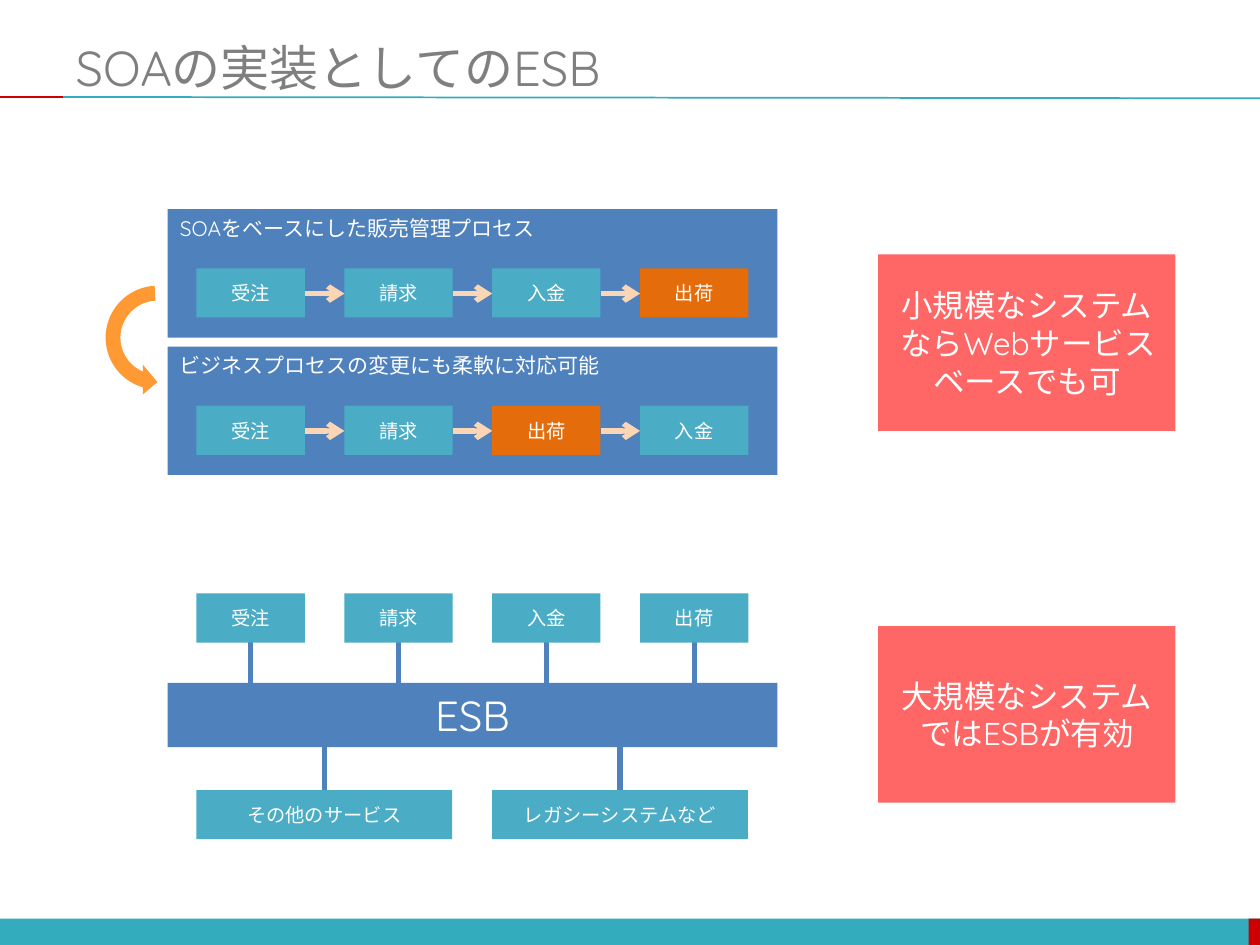
from lxml import etree
from pptx import Presentation
from pptx.dml.color import RGBColor
from pptx.enum import shapes, text
from pptx.oxml.ns import qn
from pptx.util import Inches, Pt

TEAL = RGBColor(0x33, 0xAC, 0xBD)
RED = RGBColor(0xCC, 0x00, 0x00)
GRAY = RGBColor(0x7F, 0x7F, 0x7F)
WHITE = RGBColor(0xFF, 0xFF, 0xFF)
BLUE = RGBColor(0x4F, 0x81, 0xBD)
AQUA = RGBColor(0x4B, 0xAC, 0xC6)
ORANGE = RGBColor(0xE4, 0x6C, 0x0A)
PEACH = RGBColor(0xFC, 0xD5, 0xB5)
AMBER = RGBColor(0xFF, 0x99, 0x33)
CORAL = RGBColor(0xFF, 0x66, 0x66)
FONT = "Quicksand"

presentation = Presentation()
presentation.slide_width = Inches(10)
presentation.slide_height = Inches(7.5)
slide = presentation.slides.add_slide(presentation.slide_layouts[5])


def add_box(left, top, width, height, fill, label="", size=11, centered=True):
    shape = slide.shapes.add_shape(
        shapes.MSO_SHAPE.RECTANGLE, Inches(left), Inches(top), Inches(width), Inches(height)
    )
    shape.shadow.inherit = False
    shape.fill.solid()
    shape.fill.fore_color.rgb = fill
    shape.line.fill.background()
    if label:
        frame = shape.text_frame
        frame.word_wrap = True
        frame.vertical_anchor = text.MSO_ANCHOR.MIDDLE if centered else text.MSO_ANCHOR.TOP
        paragraph = frame.paragraphs[0]
        paragraph.text = label
        paragraph.alignment = text.PP_ALIGN.CENTER if centered else text.PP_ALIGN.LEFT
        paragraph.font.name = FONT
        paragraph.font.size = Pt(size)
        paragraph.font.color.rgb = WHITE


def add_line(x1, y1, x2, y2, color, width, arrow=False):
    connector = slide.shapes.add_connector(
        shapes.MSO_CONNECTOR.STRAIGHT, Inches(x1), Inches(y1), Inches(x2), Inches(y2)
    )
    connector.line.color.rgb = color
    connector.line.width = Pt(width)
    if arrow:
        etree.SubElement(connector.line._get_or_add_ln(), qn("a:tailEnd"), type="arrow")
    etree.SubElement(connector._element.spPr, qn("a:effectLst"))


add_box(0, 7.29, 10, 0.22, TEAL)
add_box(9.91, 7.29, 0.1, 0.22, RED)
add_line(0.5, 0.77, 10, 0.78, TEAL, 1)
add_line(0, 0.77, 0.5, 0.77, RED, 1)

title = slide.shapes.title
title.left, title.top, title.width, title.height = Inches(0.5), Inches(0.3), Inches(9.5), Inches(0.46)
title.text_frame.text = "SOAの実装としてのESB"
title.text_frame.auto_size = text.MSO_AUTO_SIZE.NONE
title.text_frame.vertical_anchor = text.MSO_ANCHOR.MIDDLE
paragraph = title.text_frame.paragraphs[0]
paragraph.alignment = text.PP_ALIGN.LEFT
paragraph.font.name = FONT
paragraph.font.size = Pt(28)
paragraph.font.color.rgb = GRAY

PANEL_LEFT, PANEL_WIDTH = 1.33, 4.84
STEP_WIDTH, STEP_HEIGHT = 0.86, 0.39
columns = [1.56 + 3.52 / 3 * index for index in range(4)]

processes = [
    (1.66, "SOAをベースにした販売管理プロセス", ["受注", "請求", "入金", "出荷"]),
    (2.75, "ビジネスプロセスの変更にも柔軟に対応可能", ["受注", "請求", "出荷", "入金"]),
]
for top, heading, steps in processes:
    add_box(PANEL_LEFT, top, PANEL_WIDTH, 1.02, BLUE, heading, 12, centered=False)
    for left, step in zip(columns, steps):
        fill = ORANGE if step == "出荷" else AQUA
        add_box(left, top + 0.47, STEP_WIDTH, STEP_HEIGHT, fill, step)
    for left, following in zip(columns, columns[1:]):
        add_line(left + STEP_WIDTH, top + 0.67, following, top + 0.67, PEACH, 3, arrow=True)

change_arrow = slide.shapes.add_shape(
    shapes.MSO_SHAPE.CIRCULAR_ARROW, Inches(0.78), Inches(2.21), Inches(0.94), Inches(0.94)
)
change_arrow.shadow.inherit = False
change_arrow.fill.solid()
change_arrow.fill.fore_color.rgb = AMBER
change_arrow.line.fill.background()
change_arrow.rotation = 270
change_arrow._element.spPr.xfrm.set("flipH", "1")
for index, value in enumerate([0.125, 11.423, 204.577, 109.838, 0.125]):
    change_arrow.adjustments[index] = value

for left, service in zip(columns, ["受注", "請求", "入金", "出荷"]):
    center = left + STEP_WIDTH / 2
    add_line(center, 4.95, center, 5.53, BLUE, 3)
    add_box(left, 4.71, STEP_WIDTH, STEP_HEIGHT, AQUA, service)
for left, system in zip(columns[::2], ["その他のサービス", "レガシーシステムなど"]):
    center = left + 2.03 / 2
    add_line(center, 5.8, center, 6.38, BLUE, 3)
    add_box(left, 6.27, 2.03, STEP_HEIGHT, AQUA, system)
add_box(PANEL_LEFT, 5.42, PANEL_WIDTH, 0.51, BLUE, "ESB", 24)

add_box(6.97, 2.02, 2.36, 1.4, CORAL, "小規模なシステムならWebサービスベースでも可", 18)
add_box(6.97, 4.97, 2.36, 1.4, CORAL, "大規模なシステムではESBが有効", 18)

presentation.save("out.pptx")
